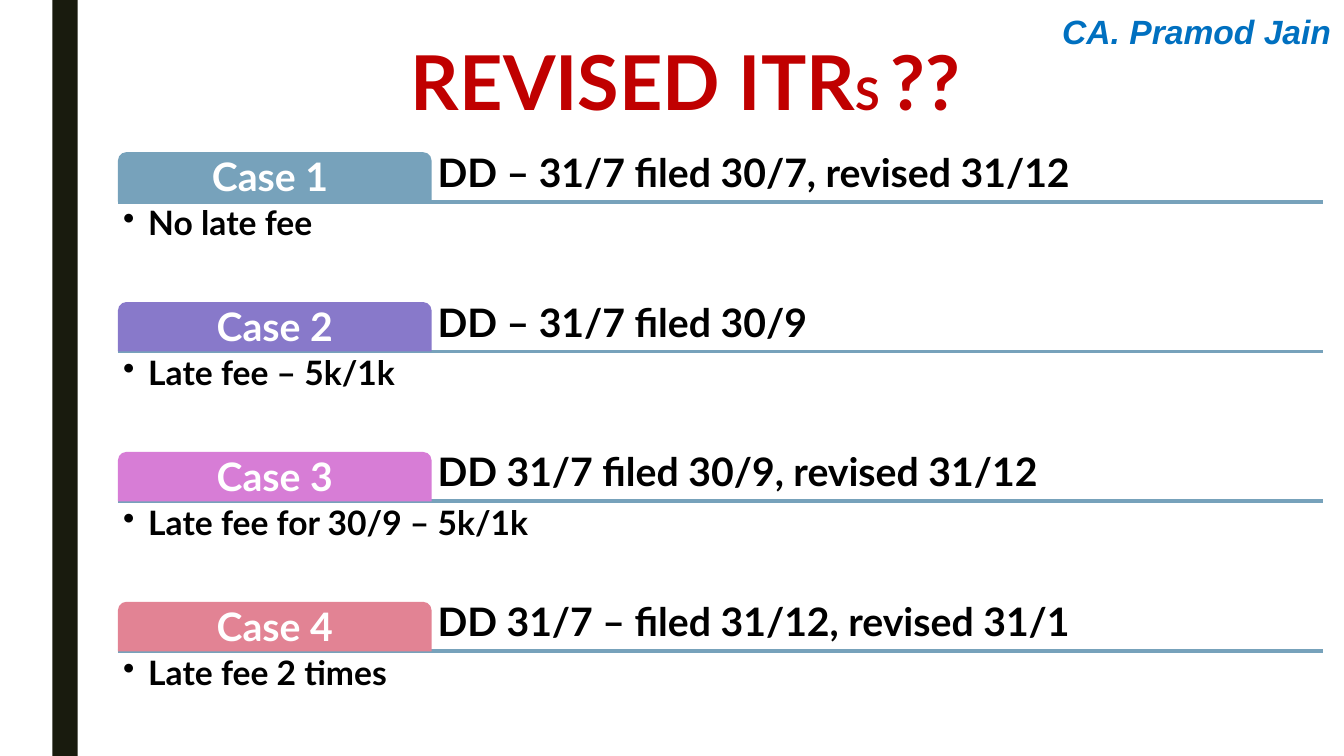
import pptx
import pptx.util
import pptx.dml.color
import pptx.enum.shapes
import pptx.enum.text
import pptx.oxml.ns
import lxml.etree

Inches = pptx.util.Inches
ALIGN = pptx.enum.text.PP_ALIGN
ANCHOR = pptx.enum.text.MSO_ANCHOR
SHAPE = pptx.enum.shapes.MSO_SHAPE

# Content
AUTHOR = "CA. Pramod Jain"
TITLE = [("REVISED ITR", 54), ("S ", 32), ("??", 54)]
CASES = [
    ("Case 1 ", "DD – 31/7 filed 30/7, revised 31/12", "No late fee", "blue"),
    ("Case 2", "DD – 31/7 filed 30/9", "Late fee – 5k/1k", "violet"),
    ("Case 3", "DD 31/7 filed 30/9, revised 31/12", "Late fee for 30/9 – 5k/1k", "pink"),
    ("Case 4", "DD 31/7 – filed 31/12, revised 31/1", "Late fee 2 times", "rose"),
]
COLORS = {
    "bar": "191B0E", "author": "0070C0", "title": "C00000", "text": "000000",
    "white": "FFFFFF", "blue": "77A2BB", "violet": "8879CA", "pink": "D77DD6",
    "rose": "E28394",
}

# Text formats
FORMATS = {
    "author": {"name": "Arial", "size": 24, "bold": True, "italic": True, "color": "author"},
    "title": {"name": "Lato", "bold": True, "color": "title"},
    "tab": {"name": "Lato", "size": 28, "bold": True, "color": "white"},
    "heading": {"name": "Lato", "size": 28, "bold": True, "color": "text"},
    "outcome": {"name": "Lato", "size": 24, "bold": True, "color": "text"},
}

# Layout
LEFT, RIGHT, TAB_WIDTH = 1.17, 13.12, 3.11
FIRST_TOP, PITCH, TAB_HEIGHT, OUTCOME_HEIGHT = 1.51, 1.487, 0.49, 0.98


def rgb(key):
    return pptx.dml.color.RGBColor.from_string(COLORS[key])


def write(shape, runs, style, align=ALIGN.LEFT, anchor=ANCHOR.TOP,
          insets=(0.1, 0.05, 0.1, 0.05), spacing=1.0, bullet=None):
    frame = shape.text_frame
    frame.word_wrap = True
    frame.vertical_anchor = anchor
    for side, inset in zip(("left", "top", "right", "bottom"), insets):
        setattr(frame, f"margin_{side}", Inches(inset))
    paragraph = frame.paragraphs[0]
    paragraph.alignment = align
    paragraph.line_spacing = spacing
    if bullet:
        properties = paragraph._p.get_or_add_pPr()
        properties.set("marL", str(Inches(0.25)))
        properties.set("indent", str(Inches(-0.25)))
        mark = lxml.etree.SubElement(properties, pptx.oxml.ns.qn("a:buChar"))
        mark.set("char", bullet)
    for text, size in runs:
        run = paragraph.add_run()
        run.text = text
        for key, value in {"size": size, **FORMATS[style]}.items():
            if key == "color":
                run.font.color.rgb = rgb(value)
            else:
                setattr(run.font, key, pptx.util.Pt(value) if key == "size" else value)


def add_text(slide, box, runs, style, **options):
    write(slide.shapes.add_textbox(*map(Inches, box)), runs, style, **options)


def add_block(slide, kind, box, fill):
    block = slide.shapes.add_shape(kind, *map(Inches, box))
    block.shadow.inherit = False
    block.fill.solid()
    block.fill.fore_color.rgb = rgb(fill)
    block.line.fill.background()
    return block


def add_rule(slide, y):
    rule = slide.shapes.add_connector(
        pptx.enum.shapes.MSO_CONNECTOR.STRAIGHT,
        Inches(LEFT), Inches(y), Inches(RIGHT), Inches(y))
    rule.line.color.rgb = rgb("blue")
    rule.line.width = pptx.util.Pt(2.75)
    lxml.etree.SubElement(rule._element.spPr, pptx.oxml.ns.qn("a:effectLst"))


def add_case(slide, top, label, heading, outcome, color):
    base = top + TAB_HEIGHT
    tab_right = LEFT + TAB_WIDTH
    add_rule(slide, base)
    add_text(slide, (tab_right, top, RIGHT - tab_right, TAB_HEIGHT), [(heading, 28)],
             "heading", anchor=ANCHOR.BOTTOM, insets=[0.06] * 4, spacing=0.9)
    tab = add_block(slide, SHAPE.ROUND_2_SAME_RECTANGLE,
                    (LEFT, top, TAB_WIDTH, TAB_HEIGHT), color)
    write(tab, [(label, 28)], "tab", align=ALIGN.CENTER, anchor=ANCHOR.MIDDLE,
          insets=(0.08, 0.08, 0.08, 0.06), spacing=0.9)
    add_text(slide, (LEFT, base, RIGHT - LEFT, OUTCOME_HEIGHT), [(outcome, 24)],
             "outcome", insets=[0.05] * 4, spacing=0.9, bullet="•")


def main():
    deck = pptx.Presentation()
    deck.slide_width, deck.slide_height = Inches(13.33), Inches(7.5)
    slide = deck.slides.add_slide(deck.slide_layouts[6])

    # Side bar, author and title
    add_block(slide, SHAPE.RECTANGLE, (0.52, 0, 0.25, 7.5), "bar")
    add_text(slide, (9.88, 0.06, 3.42, 0.42), [(AUTHOR, 24)], "author", align=ALIGN.RIGHT)
    add_text(slide, (0.99, 0.34, 11.62, 0.92), TITLE, "title",
             align=ALIGN.CENTER, anchor=ANCHOR.MIDDLE)

    # Cases
    for index, case in enumerate(CASES):
        add_case(slide, FIRST_TOP + index * PITCH, *case)

    deck.save("out.pptx")


if __name__ == "__main__":
    main()
